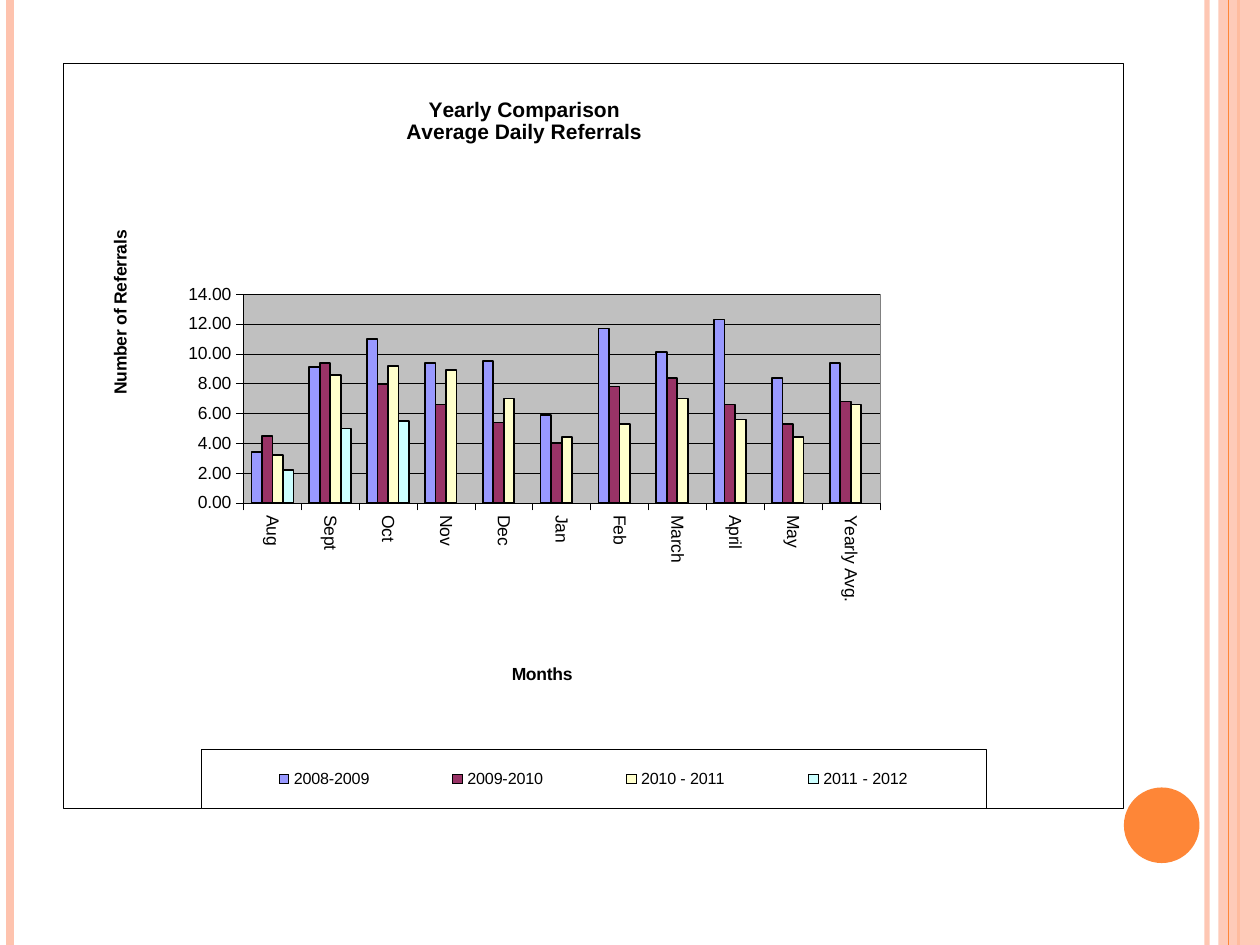
from dataclasses import dataclass
from typing import Any, Optional

import pptx
import pptx.chart.data
import pptx.dml.color
import pptx.enum.chart
import pptx.enum.shapes
import pptx.oxml
import pptx.oxml.ns
import pptx.util
from pptx.util import Inches, Pt

ORANGE = "FE8637"
PEACH = "FEC3AE"
BLACK = "000000"
SLIDE_HEIGHT = 7.5
NAMESPACES = pptx.oxml.ns.nsdecls("c", "a")


@dataclass
class Stripe:
    x: float
    color: str
    width: float
    opacity: int = 100


@dataclass
class Block:
    kind: Any
    left: float
    top: float
    width: float
    height: float
    color: str
    opacity: int = 100


@dataclass
class Year:
    name: str
    color: str
    values: list[Optional[float]]


STRIPES = [
    Stripe(9.58, PEACH, 3, 93),
    Stripe(0.08, PEACH, 4.5),
    Stripe(9.83, ORANGE, 1.5),
    Stripe(9.75, ORANGE, 0.75),
]
BAND = Block(pptx.enum.shapes.MSO_SHAPE.RECTANGLE, 9.67, 0, 0.33, SLIDE_HEIGHT, PEACH, 87)
CIRCLE = Block(pptx.enum.shapes.MSO_SHAPE.OVAL, 8.92, 6.25, 0.6, 0.6, ORANGE)

MONTHS = ["Aug", "Sept", "Oct", "Nov", "Dec", "Jan", "Feb", "March", "April", "May", "Yearly Avg."]
YEARS = [
    Year("2008-2009", "9999FF", [3.4, 9.1, 11, 9.4, 9.5, 5.9, 11.7, 10.1, 12.3, 8.4, 9.4]),
    Year("2009-2010", "993366", [4.5, 9.4, 8, 6.6, 5.4, 4, 7.8, 8.4, 6.6, 5.3, 6.8]),
    Year("2010 - 2011", "FFFFCC", [3.2, 8.6, 9.2, 8.9, 7, 4.4, 5.3, 7, 5.6, 4.4, 6.6]),
    Year("2011 - 2012", "CCFFFF", [2.2, 5, 5.5] + [None] * 8),
]


def set_values(target: Any, values: dict[str, Any]) -> None:
    for name, value in values.items():
        setattr(target, name, value)


def rgb(color: str) -> pptx.dml.color.RGBColor:
    return pptx.dml.color.RGBColor.from_string(color)


def format_font(font: Any, size: float, bold: bool = False) -> None:
    set_values(font, {"name": "Arial", "size": Pt(size), "bold": bold})
    font.color.rgb = rgb(BLACK)


def format_line(line: Any, color: str, width: float) -> None:
    line.color.rgb = rgb(color)
    line.width = Pt(width)


def set_opacity(element: Any, opacity: int) -> None:
    if opacity < 100:
        color = element.xpath(".//p:spPr//a:srgbClr")[0]
        color.append(pptx.oxml.parse_xml(f'<a:alpha {NAMESPACES} val="{opacity * 1000}"/>'))


def draw_stripe(slide: Any, stripe: Stripe) -> None:
    connector = slide.shapes.add_connector(
        pptx.enum.shapes.MSO_CONNECTOR.STRAIGHT,
        Inches(stripe.x), Inches(0), Inches(stripe.x), Inches(SLIDE_HEIGHT),
    )
    format_line(connector.line, stripe.color, stripe.width)
    set_opacity(connector._element, stripe.opacity)
    properties = connector._element.xpath("./p:spPr")[0]
    properties.append(pptx.oxml.parse_xml(f"<a:effectLst {NAMESPACES}/>"))


def draw_block(slide: Any, block: Block) -> None:
    shape = slide.shapes.add_shape(
        block.kind, Inches(block.left), Inches(block.top), Inches(block.width), Inches(block.height)
    )
    shape.shadow.inherit = False
    shape.fill.solid()
    shape.fill.fore_color.rgb = rgb(block.color)
    shape.line.fill.background()
    set_opacity(shape._element, block.opacity)


def layout_xml(x: float, y: float, size: Optional[tuple[float, float]] = None, inner: bool = False) -> Any:
    target = '<c:layoutTarget val="inner"/>' if inner else ""
    extent = f'<c:w val="{size[0]}"/><c:h val="{size[1]}"/>' if size else ""
    return pptx.oxml.parse_xml(
        f'<c:layout {NAMESPACES}><c:manualLayout>{target}<c:xMode val="edge"/><c:yMode val="edge"/>'
        f'<c:x val="{x}"/><c:y val="{y}"/>{extent}</c:manualLayout></c:layout>'
    )


def area_xml(fill: str, border: str) -> Any:
    return pptx.oxml.parse_xml(
        f'<c:spPr {NAMESPACES}><a:solidFill><a:srgbClr val="{fill}"/></a:solidFill>'
        f'<a:ln w="3175"><a:solidFill><a:srgbClr val="{border}"/></a:solidFill></a:ln></c:spPr>'
    )


def remove_layout(element: Any) -> None:
    for layout in element.xpath("./c:layout"):
        element.remove(layout)


def write_title(title: Any, lines: list[str], size: float, x: float, y: float) -> None:
    frame = title.text_frame
    for index, text in enumerate(lines):
        paragraph = frame.paragraphs[0] if index == 0 else frame.add_paragraph()
        run = paragraph.add_run()
        run.text = text
        format_font(run.font, size, True)
    remove_layout(title._element)
    title._element.xpath("./c:tx")[0].addnext(layout_xml(x, y))


def draw_chart(slide: Any) -> None:
    data = pptx.chart.data.CategoryChartData(number_format="0.00")
    data.categories = MONTHS
    for year in YEARS:
        data.add_series(year.name, year.values)
    chart = slide.shapes.add_chart(
        pptx.enum.chart.XL_CHART_TYPE.COLUMN_CLUSTERED,
        Inches(0.5), Inches(0.5), Inches(8.42), Inches(5.92), data,
    ).chart
    format_font(chart.font, 10)
    plot = chart.plots[0]
    set_values(plot, {"gap_width": 150, "overlap": 0, "vary_by_categories": False})
    for series, year in zip(plot.series, YEARS):
        series.invert_if_negative = False
        series.format.fill.solid()
        series.format.fill.fore_color.rgb = rgb(year.color)
        format_line(series.format.line, BLACK, 1)

    for axis in (chart.category_axis, chart.value_axis):
        axis.major_tick_mark = pptx.enum.chart.XL_TICK_MARK.OUTSIDE
        format_font(axis.tick_labels.font, 10)
        format_line(axis.format.line, BLACK, 0.25)
    chart.category_axis._element.xpath("./c:txPr/a:bodyPr")[0].set("rot", "5400000")
    set_values(chart.value_axis, {"minimum_scale": 0, "maximum_scale": 14, "major_unit": 2})
    set_values(chart.value_axis.tick_labels, {"number_format": "0.00", "number_format_is_linked": False})
    format_line(chart.value_axis.major_gridlines.format.line, BLACK, 0.25)

    write_title(chart.chart_title, ["Yearly Comparison", "Average Daily Referrals"], 12, 0.32, 0.04)
    write_title(chart.category_axis.axis_title, ["Months"], 10, 0.42, 0.8)
    value_title = chart.value_axis.axis_title
    write_title(value_title, ["Number of Referrals"], 10, 0.04, 0.22)
    body = value_title._element.xpath(".//a:bodyPr")[0]
    body.set("rot", "-5400000")
    body.set("vert", "horz")

    chart.has_legend = True
    legend = chart.legend
    set_values(legend, {"position": pptx.enum.chart.XL_LEGEND_POSITION.BOTTOM, "include_in_layout": False})
    format_font(legend.font, 9.2)
    remove_layout(legend._element)
    legend._element.xpath("./c:legendPos")[0].addnext(layout_xml(0.13, 0.92, (0.74, 0.08)))
    legend._element.xpath("./c:overlay")[0].addnext(area_xml("FFFFFF", BLACK))

    plot_area = chart._chartSpace.xpath("./c:chart/c:plotArea")[0]
    remove_layout(plot_area)
    plot_area.insert(0, layout_xml(0.17, 0.31, (0.6, 0.28), True))
    plot_area.append(area_xml("C0C0C0", "808080"))
    chart._chartSpace.xpath("./c:chart")[0].addnext(area_xml("FFFFFF", BLACK))


def main() -> None:
    presentation = pptx.Presentation()
    set_values(presentation, {"slide_width": Inches(10), "slide_height": Inches(SLIDE_HEIGHT)})
    slide = presentation.slides.add_slide(presentation.slide_layouts[6])
    for stripe in STRIPES[:3]:
        draw_stripe(slide, stripe)
    draw_block(slide, BAND)
    draw_stripe(slide, STRIPES[3])
    draw_block(slide, CIRCLE)
    draw_chart(slide)
    presentation.save("out.pptx")


if __name__ == "__main__":
    main()
